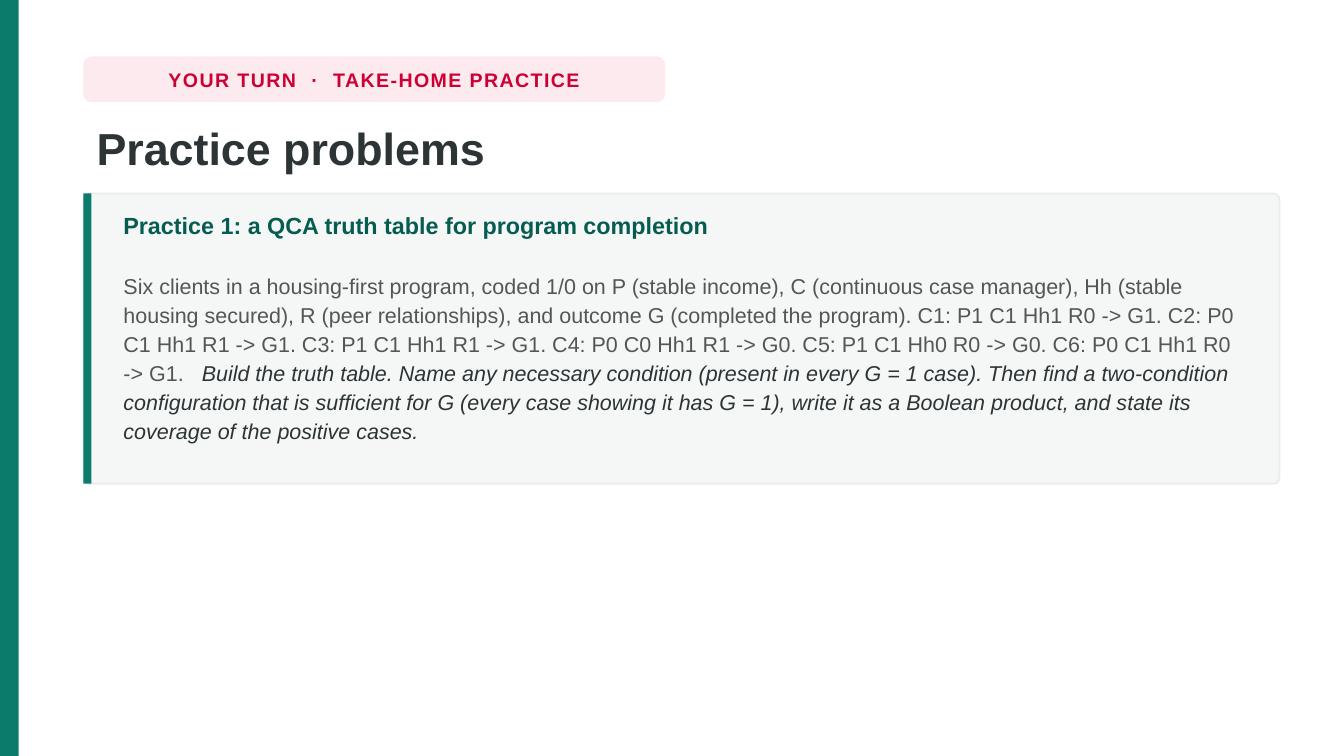
"""Build the practice problems slide."""
import pptx
import pptx.util
import pptx.dml.color
import pptx.enum.shapes
import pptx.enum.text
from dataclasses import dataclass

Inches = pptx.util.Inches
Kind = pptx.enum.shapes.MSO_SHAPE
Align = pptx.enum.text.PP_ALIGN
Anchor = pptx.enum.text.MSO_ANCHOR


@dataclass(frozen=True)
class Theme:
    font: str = "Arial"
    green: str = "0B7B6B"
    deep: str = "065C50"
    red: str = "CC0033"
    pink: str = "FDEAEF"
    ink: str = "2D3436"
    gray: str = "555555"
    pale: str = "F4F7F6"
    edge: str = "E8ECEE"
    tag: float = 10.5
    title: float = 24
    head: float = 12.5
    body: float = 11.5


def tint(code):
    return pptx.dml.color.RGBColor.from_string(code)


def apply(target, values):
    for name, value in values.items():
        setattr(target, name, value)


class Deck:
    def __init__(self, theme, width, height):
        self.theme = theme
        self.file = pptx.Presentation()
        apply(self.file, {"slide_width": Inches(width), "slide_height": Inches(height)})
        self.slide = self.file.slides.add_slide(self.file.slide_layouts[6])

    def block(self, area, fill, line=None, round=None):
        kind = Kind.RECTANGLE if round is None else Kind.ROUNDED_RECTANGLE
        shape = self.slide.shapes.add_shape(kind, *map(Inches, area))
        shape.shadow.inherit = False
        if round is not None:
            shape.adjustments[0] = round
        shape.fill.solid()
        shape.fill.fore_color.rgb = tint(fill)
        if line:
            shape.line.color.rgb = tint(line)
            shape.line.width = pptx.util.Pt(1)
        else:
            shape.line.fill.background()

    def text(self, area, paras, **frame):
        box = self.slide.shapes.add_textbox(*map(Inches, area)).text_frame
        apply(box, {"word_wrap": True, **frame})
        for index, (form, runs) in enumerate(paras):
            para = box.add_paragraph() if index else box.paragraphs[0]
            apply(para, form)
            for words, size, color, style in runs:
                self.run(para, words, size, color, **style)

    def run(self, para, words, size, color, space=0, **style):
        run = para.add_run()
        run.text = words
        apply(run.font, {"name": self.theme.font, "size": pptx.util.Pt(size), **style})
        run.font.color.rgb = tint(color)
        if space:
            run.font._element.set("spc", str(round(space * 100)))


def main():
    theme = Theme()
    width = 10
    height = width * 9 / 16
    deck = Deck(theme, width, height)
    left, wide = 0.62, 8.9
    top, tall = 1.44, 2.16
    tag = (left, 0.42, 4.33, 0.34)
    bold = {"bold": True}

    deck.block((0, 0, 0.14, height), theme.green)
    deck.block(tag, theme.pink, round=0.18)
    near, far = 0.8, 4.5
    parts = [("YOUR TURN", near), (" ", far), ("·", near), (" ", far),
             ("TAKE-HOME PRACTICE", near)]
    label = [(words, theme.tag, theme.red, {"space": gap, **bold}) for words, gap in parts]
    deck.text(tag, [({"alignment": Align.CENTER}, label)],
              word_wrap=False, vertical_anchor=Anchor.MIDDLE)
    deck.text((left, 0.84, wide, 0.56), [
        ({"line_spacing": 1.02}, [("Practice problems", theme.title, theme.ink, bold)]),
    ])

    deck.block((left, top, wide, tall), theme.pale, theme.edge, 0.02)
    deck.block((left, top, 0.06, tall), theme.green)
    facts = (
        "Six clients in a housing-first program, coded 1/0 on P (stable income), "
        "C (continuous case manager), Hh (stable housing secured), R (peer relationships), "
        "and outcome G (completed the program). C1: P1 C1 Hh1 R0 -> G1. "
        "C2: P0 C1 Hh1 R1 -> G1. C3: P1 C1 Hh1 R1 -> G1. C4: P0 C0 Hh1 R1 -> G0. "
        "C5: P1 C1 Hh0 R0 -> G0. C6: P0 C1 Hh1 R0 -> G1."
    )
    task = (
        "Build the truth table. Name any necessary condition (present in every G = 1 case). "
        "Then find a two-condition configuration that is sufficient for G (every case "
        "showing it has G = 1), write it as a Boolean product, and state its coverage "
        "of the positive cases."
    )
    head = "Practice 1: a QCA truth table for program completion"
    loose = {"line_spacing": 1.12}
    deck.text((0.82, 1.5, 8.48, 2), [
        (loose, [(head, theme.head, theme.deep, bold)]),
        ({"space_before": pptx.util.Pt(16.5), **loose}, [
            (facts, theme.body, theme.gray, {}),
            (" ", theme.body, theme.gray, {"space": 6.4}),
            (task, theme.body, theme.ink, {"italic": True}),
        ]),
    ])
    deck.file.save("out.pptx")


if __name__ == "__main__":
    main()
